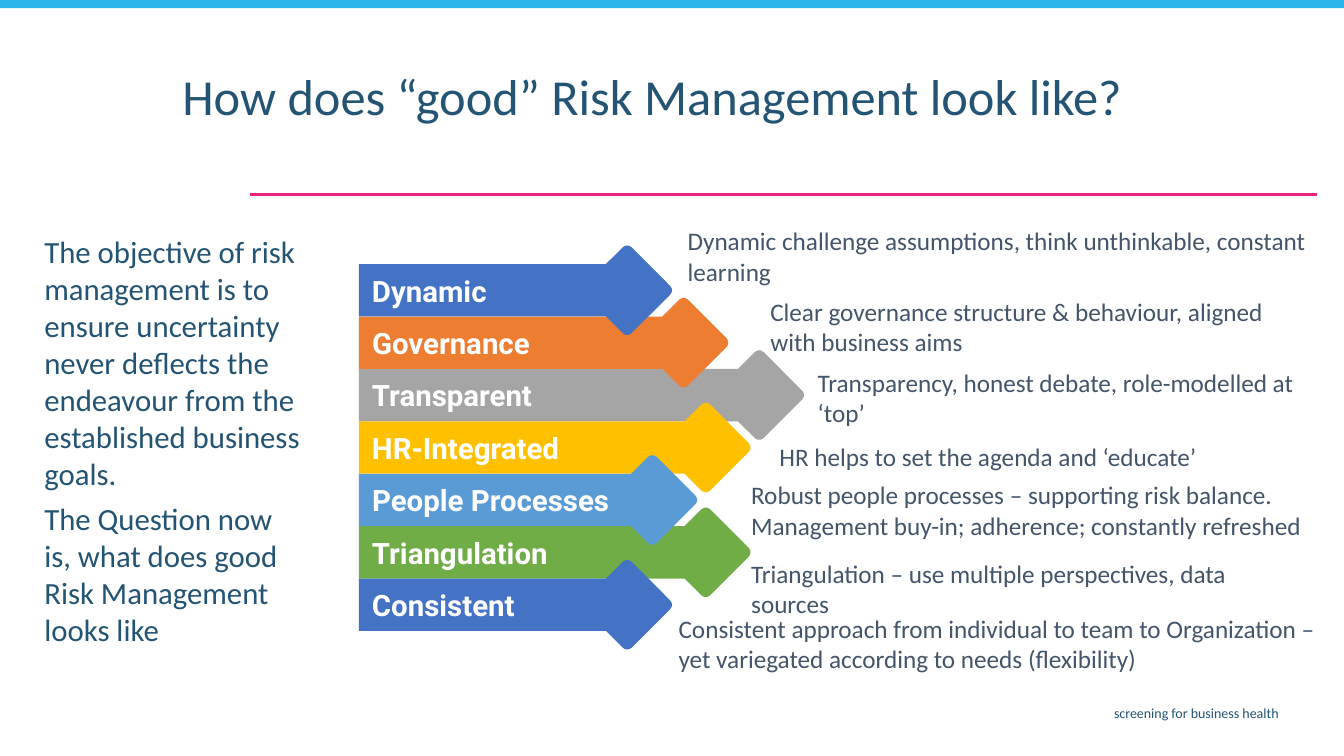
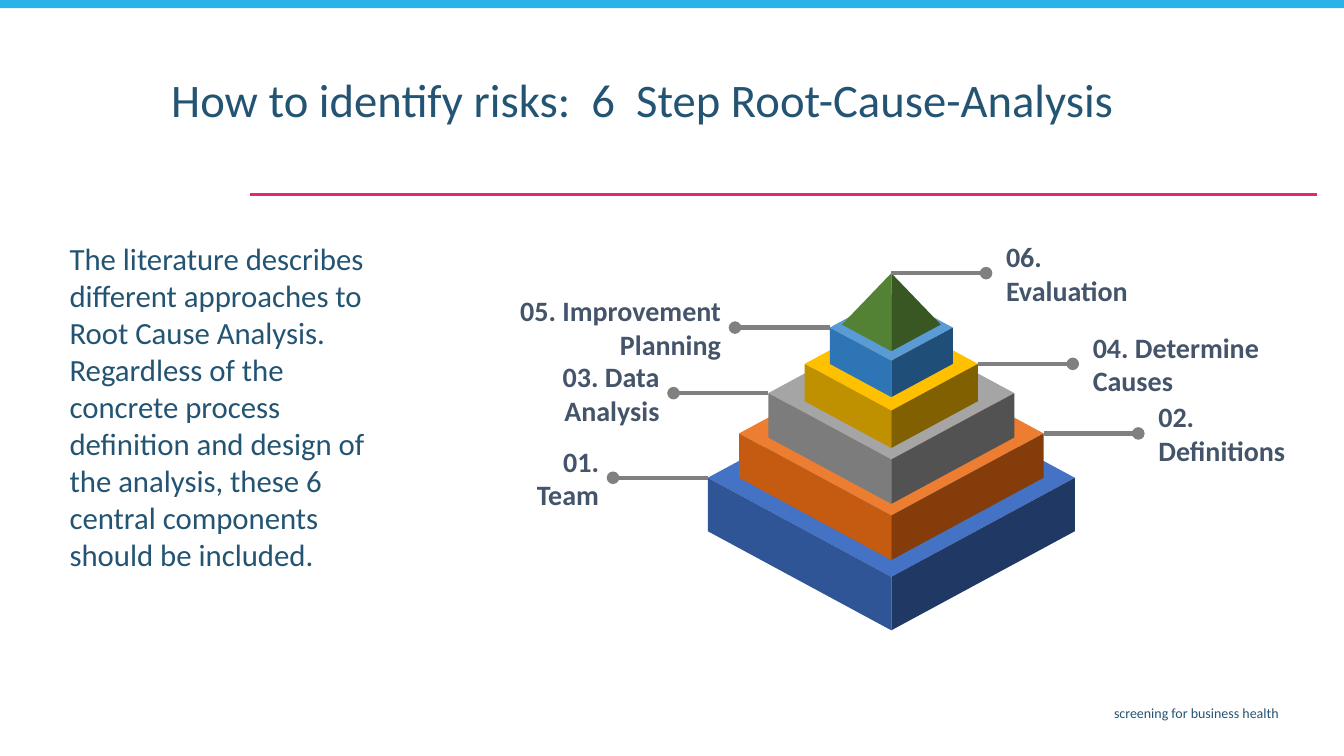
"""Build two slides on good risk management and root-cause analysis."""
from math import sqrt

from lxml.etree import SubElement
from pptx import Presentation
from pptx.dml.color import RGBColor
from pptx.enum.shapes import MSO_CONNECTOR, MSO_SHAPE
from pptx.enum.text import MSO_ANCHOR, PP_ALIGN
from pptx.oxml.ns import qn
from pptx.util import Inches, Pt

NAVY, SLATE, WHITE = "245473", "44546A", "FFFFFF"
SKY, PINK, GREY = "29B3E8", "EC2179", "808080"
BLUE, ORANGE, SILVER = "4472C4", "ED7D31", "A5A5A5"
GOLD, AZURE, GREEN = "FFC000", "5B9BD5", "70AD47"

BODY_INSETS = (0.09, 0.04)
NOTE_INSETS = (0.04, 0.02)

BAR_LEFT, BAR_TOP, BAR_HEIGHT = 3.56, 2.62, 0.52
TIP_SIDE, TIP_ROUNDING = 0.47 * sqrt(2), 0.09

QUALITIES = [
    ("Dynamic", BLUE, 6.22, (6.78, 2.22, 6.55),
     "Dynamic challenge assumptions, think unthinkable, constant learning"),
    ("Governance", ORANGE, 6.78, (7.6, 2.92, 5.2),
     "Clear governance structure & behaviour, aligned with business aims"),
    ("Transparent", SILVER, 7.53, (8.07, 3.62, 5.17),
     "Transparency, honest debate, role-modelled at ‘top’"),
    ("HR-Integrated", GOLD, 7, (7.69, 4.36, 4.68),
     "HR helps to set the agenda and ‘educate’"),
    ("People Processes", AZURE, 6.47, (7.41, 4.74, 5.8),
     "Robust people processes – supporting risk balance. "
     "Management buy-in; adherence; constantly refreshed"),
    ("Triangulation", GREEN, 7, (7.41, 5.52, 5.61),
     "Triangulation – use multiple perspectives, data sources"),
    ("Consistent", BLUE, 6.22, (6.69, 6.06, 6.55),
     "Consistent approach from individual to team to Organization – "
     "yet variegated according to needs (flexibility)"),
]
STACKING = (2, 5, 1, 3, 4, 0, 6)

AXIS, TIER_SLOPE, LEADER = 8.84, 0.54, 0.94
TIERS = [
    (1.82, 4.74, 0.53, (BLUE, "2F5597", "203864")),
    (1.51, 4.3, 0.44, (ORANGE, "C55A11", "843C0B")),
    (1.22, 3.9, 0.44, (SILVER, "7C7C7C", "525252")),
    (0.86, 3.61, 0.37, (GOLD, "BF9000", "806000")),
    (0.61, 3.25, 0.36, (AZURE, "2E75B6", "1F4E79")),
]
PEAK_TOP, PEAK_HALF, PEAK_SIDE = 2.71, 0.49, 3.22
STEPS = [("01. Team", 1.2), ("02. Definitions", 1.81),
         ("03. Data Analysis", 2.07), ("04. Determine Causes", 2.63),
         ("05. Improvement Planning", 3.13), ("06. Evaluation", 1.76)]


def color(value):
    """Turn a hex string into a colour."""
    return RGBColor.from_string(value)


def paint(shape, fill):
    """Give a shape a flat fill with no outline or shadow."""
    shape.shadow.inherit = False
    shape.fill.solid()
    shape.fill.fore_color.rgb = color(fill)
    shape.line.fill.background()


def write(shape, paragraphs, size, ink, font="Calibri", bold=False,
          align=PP_ALIGN.LEFT, anchor=MSO_ANCHOR.TOP, insets=(0.1, 0.05),
          spacing=None):
    """Fill a shape's text frame with evenly styled paragraphs."""
    frame = shape.text_frame
    frame.word_wrap = True
    frame.vertical_anchor = anchor
    frame.margin_left = frame.margin_right = Inches(insets[0])
    frame.margin_top = frame.margin_bottom = Inches(insets[1])
    for index, words in enumerate(paragraphs):
        paragraph = frame.add_paragraph() if index else frame.paragraphs[0]
        paragraph.alignment = align
        if index:
            paragraph.space_before = Pt(6)
        if spacing:
            paragraph.line_spacing = spacing
        run = paragraph.add_run()
        run.text = words
        run.font.name = font
        run.font.size = Pt(size)
        run.font.bold = bold
        run.font.color.rgb = color(ink)


def add_text(slide, box, paragraphs, size, ink, **style):
    """Place a text box given as left, top, width and height."""
    holder = slide.shapes.add_textbox(*map(Inches, box))
    write(holder, paragraphs, size, ink, **style)


def add_block(slide, kind, box, fill):
    """Place a flat preset shape."""
    block = slide.shapes.add_shape(kind, *map(Inches, box))
    paint(block, fill)
    return block


def add_face(slide, points, fill):
    """Draw a closed flat polygon."""
    corners = [(Inches(x), Inches(y)) for x, y in points]
    builder = slide.shapes.build_freeform(*corners[0])
    builder.add_line_segments(corners[1:], close=True)
    paint(builder.convert_to_shape(), fill)


def add_line(slide, start, end, ink, width, dot=False):
    """Draw a straight line, with a dot at its end if wanted."""
    line = slide.shapes.add_connector(
        MSO_CONNECTOR.STRAIGHT, *map(Inches, (*start, *end)))
    line.line.color.rgb = color(ink)
    line.line.width = Pt(width)
    if dot:
        SubElement(line.line._get_or_add_ln(), qn("a:tailEnd"), type="oval")
    SubElement(line._element.spPr, qn("a:effectLst"))


def add_page(deck, title, left, top, size):
    """Start a slide with its band, rule, title and footer."""
    slide = deck.slides.add_slide(deck.slide_layouts[6])
    add_line(slide, (2.48, 1.93), (13.06, 1.93), PINK, 1.5)
    add_block(slide, MSO_SHAPE.RECTANGLE, (0, 0, 13.33, 0.08), SKY)
    add_text(slide, (3.65, 6.94, 9.13, 0.29),
             ["screening for business health"], 10, NAVY,
             align=PP_ALIGN.RIGHT)
    add_text(slide, (left, top, 9.68, 0.76), [title], size, NAVY, spacing=0.9)
    return slide


def add_quality(slide, row):
    """Draw one labelled bar with its rounded diamond tip."""
    name, fill, tip_x = QUALITIES[row][:3]
    top = BAR_TOP + row * BAR_HEIGHT
    bar = add_block(slide, MSO_SHAPE.RECTANGLE,
                    (BAR_LEFT, top, tip_x - BAR_LEFT, BAR_HEIGHT), fill)
    write(bar, [name], 21, WHITE, font="Roboto", bold=True,
          anchor=MSO_ANCHOR.MIDDLE, insets=(0.13, 0))
    tip = add_block(slide, MSO_SHAPE.ROUNDED_RECTANGLE,
                    (tip_x - TIP_SIDE / 2, top + (BAR_HEIGHT - TIP_SIDE) / 2,
                     TIP_SIDE, TIP_SIDE), fill)
    tip.adjustments[0] = TIP_ROUNDING
    tip.rotation = 45


def add_tier(slide, half, side_y, depth, fills):
    """Draw one pyramid tier as a top and two side faces."""
    top_fill, left_fill, right_fill = fills
    rise = half * TIER_SLOPE
    front = (AXIS, side_y + rise)
    add_face(slide, [(AXIS, side_y - rise), (AXIS + half, side_y), front,
                     (AXIS - half, side_y)], top_fill)
    for edge, fill in ((AXIS + half, right_fill), (AXIS - half, left_fill)):
        add_face(slide, [front, (edge, side_y), (edge, side_y + depth),
                         (AXIS, side_y + rise + depth)], fill)


def add_peak(slide):
    """Draw the two faces of the pyramid's peak."""
    front = (AXIS, PEAK_SIDE + PEAK_HALF * TIER_SLOPE)
    for edge, fill in ((AXIS + PEAK_HALF, "385723"),
                       (AXIS - PEAK_HALF, "548235")):
        add_face(slide, [(AXIS, PEAK_TOP), (edge, PEAK_SIDE), front], fill)


def add_step(slide, index, half, y):
    """Label a tier, odd steps on the left and even ones on the right."""
    name, width = STEPS[index]
    on_right = index % 2 == 1
    side = 1 if on_right else -1
    start = AXIS + side * half
    end = start + side * LEADER
    add_line(slide, (start, y), (end, y), GREY, 3, dot=True)
    left = end + 0.1 if on_right else end - 0.04 - width
    add_text(slide, (left, y - 0.4, width, 0.8), [name], 20, SLATE, bold=True,
             align=PP_ALIGN.LEFT if on_right else PP_ALIGN.RIGHT,
             anchor=MSO_ANCHOR.MIDDLE)


def build_qualities(deck):
    """Build the slide on what good risk management looks like."""
    slide = add_page(deck, "How does “good” Risk Management look like?",
                     1.71, 0.67, 36)
    add_text(slide, (0.35, 2.27, 2.76, 4.7), [
        "The objective of risk management is to ensure uncertainty never "
        "deflects the endeavour from the established business goals.",
        "The Question now is, what does good Risk Management looks like",
    ], 22, NAVY, insets=BODY_INSETS)
    for row in STACKING:
        add_quality(slide, row)
    for *_, (left, top, width), note in QUALITIES:
        add_text(slide, (left, top, width, 0.64), [note], 18, SLATE,
                 insets=NOTE_INSETS)


def build_steps(deck):
    """Build the slide on the six steps of root-cause analysis."""
    slide = add_page(deck, "How to identify risks:  6  Step Root-Cause-Analysis",
                     1.6, 0.72, 33.3)
    add_text(slide, (0.6, 2.34, 3.11, 3.42), [
        "The literature describes different approaches to Root Cause "
        "Analysis. Regardless of the concrete process definition and design "
        "of the analysis, these 6 central components should be included.",
    ], 22, NAVY, insets=BODY_INSETS)
    for tier in TIERS:
        add_tier(slide, *tier)
    add_peak(slide)
    corners = [tier[:2] for tier in TIERS] + [(0, PEAK_TOP)]
    for index, (half, y) in enumerate(corners):
        add_step(slide, index, half, y)


def main():
    """Build and save the deck."""
    deck = Presentation()
    deck.slide_width, deck.slide_height = Inches(13.33), Inches(7.5)
    build_qualities(deck)
    build_steps(deck)
    deck.save("out.pptx")


if __name__ == "__main__":
    main()
